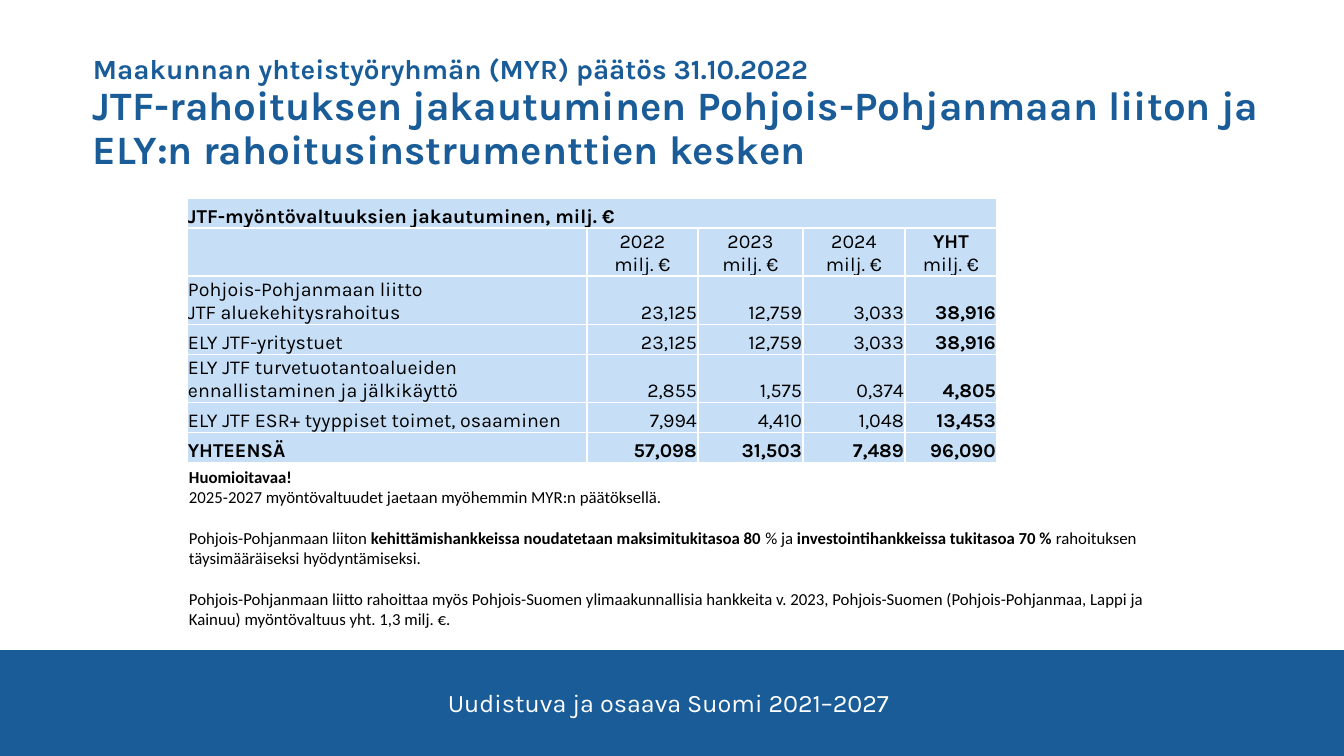
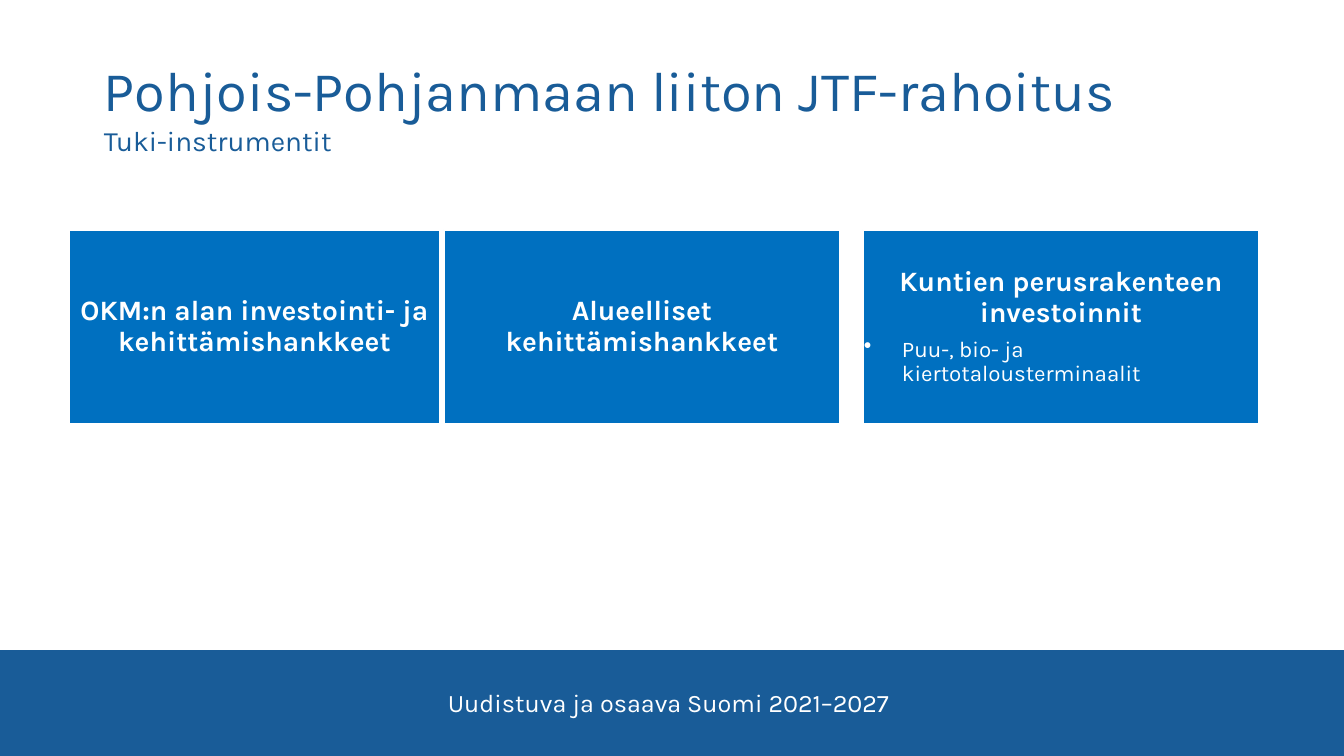
from lxml.etree import SubElement
from pptx import Presentation
from pptx.dml.color import RGBColor
from pptx.enum.shapes import MSO_SHAPE
from pptx.enum.text import MSO_ANCHOR, PP_ALIGN
from pptx.oxml import parse_xml
from pptx.oxml.ns import nsdecls, qn
from pptx.util import Emu, Pt

SLIDE_W, SLIDE_H = 1344, 756
EMU_PER_PX = 12192000 / SLIDE_W

NAVY = RGBColor(0x19, 0x5C, 0x98)
BLUE = RGBColor(0x00, 0x70, 0xC0)
PALE = RGBColor(0xC6, 0xDF, 0xF6)
WHITE = RGBColor(0xFF, 0xFF, 0xFF)
BLACK = RGBColor(0x00, 0x00, 0x00)
KARLA, CALIBRI = "Karla", "Calibri"

FOOTER = "Uudistuva ja osaava Suomi 2021–2027"
TABLE_TITLE = "JTF-myöntövaltuuksien jakautuminen, milj. €"
YEARS = ["2022", "2023", "2024", "YHT"]
FUNDING = [
    ("Pohjois-Pohjanmaan liitto\nJTF aluekehitysrahoitus", "23,125", "12,759", "3,033", "38,916"),
    ("ELY JTF-yritystuet", "23,125", "12,759", "3,033", "38,916"),
    ("ELY JTF turvetuotantoalueiden ennallistaminen ja jälkikäyttö",
     "2,855", "1,575", "0,374", "4,805"),
    ("ELY JTF ESR+ tyyppiset toimet, osaaminen", "7,994", "4,410", "1,048", "13,453"),
    ("YHTEENSÄ", "57,098", "31,503", "7,489", "96,090"),
]
COLUMN_WIDTHS = [400, 111, 105, 102, 92]
ROW_HEIGHTS = [30, 47, 47, 30, 47, 30, 30]
NOTES = [
    (0, [("Huomioitavaa!", True)]),
    (0, [("2025-2027 myöntövaltuudet jaetaan myöhemmin MYR:n päätöksellä.", False)]),
    (14.6, [("Pohjois-Pohjanmaan liiton ", False),
            ("kehittämishankkeissa noudatetaan maksimitukitasoa 80 ", True),
            ("% ja ", False),
            ("investointihankkeissa tukitasoa 70 % ", True),
            ("rahoituksen täysimääräiseksi hyödyntämiseksi.", False)]),
    (14.6, [("Pohjois-Pohjanmaan liitto rahoittaa myös Pohjois-Suomen ylimaakunnallisia "
             "hankkeita v. 2023, Pohjois-Suomen (Pohjois-Pohjanmaa, Lappi ja Kainuu) "
             "myöntövaltuus yht. 1,3 milj. €.", False)]),
]
INSTRUMENTS = [
    ((69, 230, 371, 194), "OKM:n alan investointi- ja kehittämishankkeet", None),
    ((444, 230, 396, 194), "Alueelliset kehittämishankkeet", None),
    ((863, 230, 396, 194), "Kuntien perusrakenteen investoinnit",
     "Puu-, bio- ja kiertotalousterminaalit"),
]


def px(length):
    """Turn pixels into EMU."""
    return Emu(round(length * EMU_PER_PX))


def set_insets(frame, inset):
    """Give a text frame the same inset on all sides."""
    frame.margin_left = frame.margin_right = px(inset)
    frame.margin_top = frame.margin_bottom = px(inset)


def style_run(run, size, colour, bold=False, face=KARLA):
    """Format one run."""
    run.font.size = Pt(size)
    run.font.color.rgb = colour
    run.font.bold = bold
    run.font.name = face


def style_paragraph(paragraph, size, colour, bold=False, align=PP_ALIGN.LEFT):
    """Align a paragraph and format its runs."""
    paragraph.alignment = align
    for run in paragraph.runs:
        style_run(run, size, colour, bold)


def add_frame(slide, box):
    """Add a wrapping text box and return its text frame."""
    frame = slide.shapes.add_textbox(*map(px, box)).text_frame
    frame.word_wrap = True
    return frame


def add_panel(slide, box, fill):
    """Add a filled rectangle without line or shadow."""
    panel = slide.shapes.add_shape(MSO_SHAPE.RECTANGLE, *map(px, box))
    panel.shadow.inherit = False
    panel.fill.solid()
    panel.fill.fore_color.rgb = fill
    panel.line.fill.background()
    return panel


def add_footer(slide, box):
    """Add the footer band with its programme name."""
    left, top, width, _ = box
    add_panel(slide, box, NAVY)
    programme = add_frame(slide, (left + 300, top + 32, width - 607, 40))
    programme.text = FOOTER
    style_paragraph(programme.paragraphs[0], 18, WHITE, align=PP_ALIGN.CENTER)


def add_heading(slide, box, lines, bold=False, spacing=1.0, anchor=MSO_ANCHOR.TOP):
    """Add a heading whose lines each have their own size."""
    heading = add_frame(slide, box)
    set_insets(heading, 0)
    heading.vertical_anchor = anchor
    heading.text = "\n".join(text for text, _ in lines)
    for paragraph, (_, size) in zip(heading.paragraphs, lines):
        paragraph.line_spacing = spacing
        style_paragraph(paragraph, size, NAVY, bold)


def set_borders(cell):
    """Draw thin white borders around a table cell."""
    properties = cell._tc.get_or_add_tcPr()
    for index, side in enumerate("LRTB"):
        properties.insert(index, parse_xml(
            f'<a:ln{side} {nsdecls("a")} w="12700"><a:solidFill>'
            f'<a:srgbClr val="{WHITE}"/></a:solidFill></a:ln{side}>'))


def fill_cell(cell, text, bold_lines, align):
    """Write and format one table cell; bold_lines has a flag for each line."""
    cell.text = text
    cell.vertical_anchor = MSO_ANCHOR.BOTTOM
    cell.margin_left = cell.margin_right = cell.margin_top = px(1)
    cell.margin_bottom = 0
    cell.fill.solid()
    cell.fill.fore_color.rgb = PALE
    set_borders(cell)
    for paragraph, bold in zip(cell.text_frame.paragraphs, bold_lines):
        style_paragraph(paragraph, 14, BLACK, bold, align)


def add_funding_table(slide, left, top):
    """Add the table of funding by instrument and year."""
    header = [""] + [f"{year}\nmilj. €" for year in YEARS]
    rows = [[TABLE_TITLE] + [""] * len(YEARS), header, *FUNDING]
    table = slide.shapes.add_table(
        len(rows), len(header), px(left), px(top),
        px(sum(COLUMN_WIDTHS)), px(sum(ROW_HEIGHTS))).table
    table.first_row = table.horz_banding = False
    for column, width in zip(table.columns, COLUMN_WIDTHS):
        column.width = px(width)
    for row, height in zip(table.rows, ROW_HEIGHTS):
        row.height = px(height)
    last_row, last_column = len(rows) - 1, len(header) - 1
    for r, values in enumerate(rows):
        for c, value in enumerate(values):
            bold = r in (0, last_row) or c == last_column
            number_align = PP_ALIGN.CENTER if r == 1 else PP_ALIGN.RIGHT
            fill_cell(table.cell(r, c), value, (bold, bold and r != 1),
                      number_align if c else PP_ALIGN.LEFT)
    table.cell(0, 0).merge(table.cell(0, last_column))


def add_notes_text(slide, box):
    """Add the remarks below the table."""
    remarks = add_frame(slide, box)
    for index, (gap, pieces) in enumerate(NOTES):
        remark = remarks.add_paragraph() if index else remarks.paragraphs[0]
        if gap:
            remark.space_before = Pt(gap)
        for text, bold in pieces:
            run = remark.add_run()
            run.text = text
            style_run(run, 12, BLACK, bold, CALIBRI)


def add_instrument(slide, box, name, example):
    """Add a card for one support instrument, with an optional bullet."""
    card = add_panel(slide, box, BLUE)
    card.line.color.rgb = WHITE
    card.line.width = Pt(1)
    frame = card.text_frame
    frame.word_wrap = True
    frame.vertical_anchor = MSO_ANCHOR.MIDDLE
    set_insets(frame, 1)
    frame.text = name
    frame.paragraphs[0].line_spacing = 0.9
    style_paragraph(frame.paragraphs[0], 20, WHITE, True, PP_ALIGN.CENTER)
    if example:
        bullet = frame.add_paragraph()
        bullet.text = example
        properties = bullet._p.get_or_add_pPr()
        properties.set("marL", str(px(38)))
        properties.set("indent", str(px(-38)))
        SubElement(properties, qn("a:buChar")).set("char", "•")
        bullet.line_spacing = 0.9
        bullet.space_before = Pt(7)
        style_paragraph(bullet, 16, WHITE)


def add_slide(deck):
    """Add a blank slide with the shared footer."""
    slide = deck.slides.add_slide(deck.slide_layouts[6])
    add_footer(slide, (0, 650, SLIDE_W, 106))
    return slide


def build_allocation_slide(deck):
    """Build the slide on how the funding is divided."""
    slide = add_slide(deck)
    add_heading(slide, (93, 49, 1203, 124), [
        ("Maakunnan yhteistyöryhmän (MYR) päätös 31.10.2022", 19.8),
        ("JTF-rahoituksen jakautuminen Pohjois-Pohjanmaan liiton ja "
         "ELY:n rahoitusinstrumenttien kesken", 28.8),
    ], bold=True, spacing=0.9, anchor=MSO_ANCHOR.BOTTOM)
    add_funding_table(slide, 187, 198)
    add_notes_text(slide, (179, 462, 999, 173))


def build_instruments_slide(deck):
    """Build the slide on support instruments."""
    slide = add_slide(deck)
    add_heading(slide, (104, 56, 1163, 102), [
        ("Pohjois-Pohjanmaan liiton JTF-rahoitus", 40), ("Tuki-instrumentit", 20)])
    for box, name, example in INSTRUMENTS:
        add_instrument(slide, box, name, example)


def main():
    """Build and save the presentation."""
    deck = Presentation()
    deck.slide_width, deck.slide_height = px(SLIDE_W), px(SLIDE_H)
    build_allocation_slide(deck)
    build_instruments_slide(deck)
    deck.save("out.pptx")


if __name__ == "__main__":
    main()
